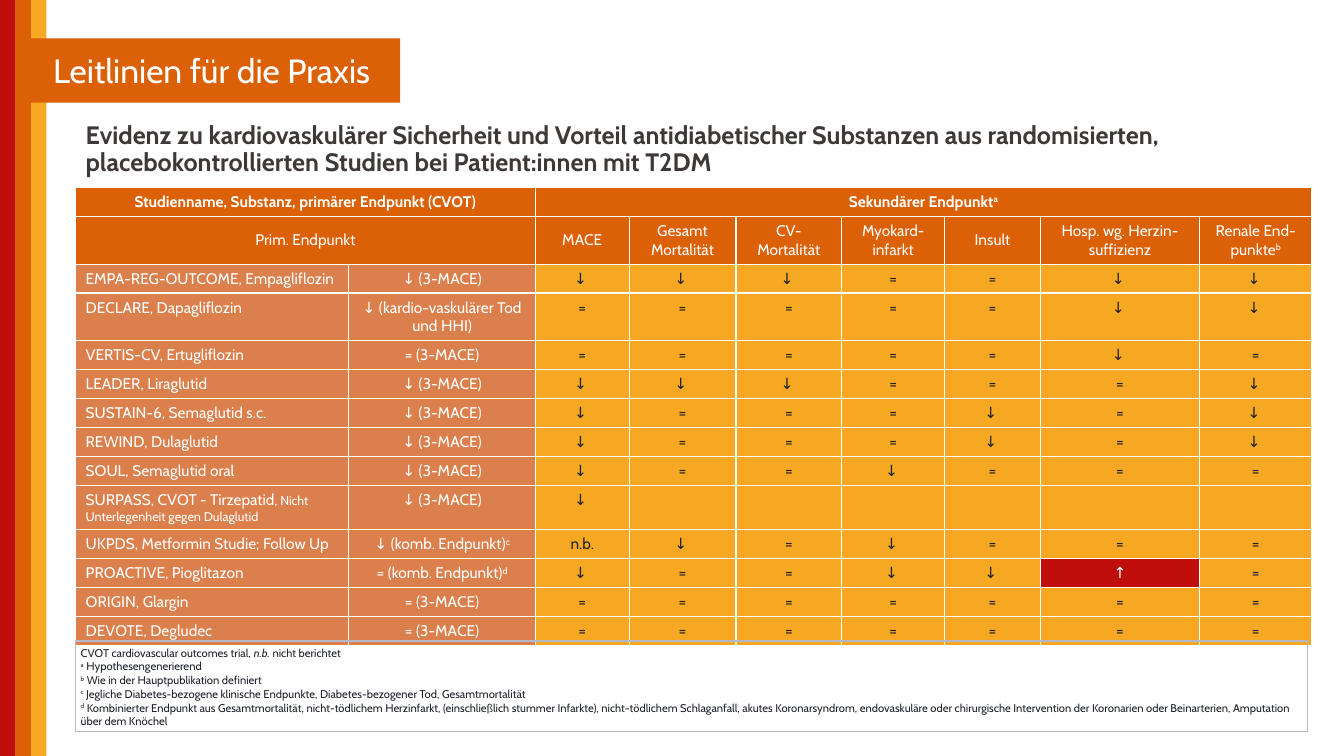
from itertools import zip_longest
from lxml import etree
from pptx import Presentation
from pptx.dml.color import RGBColor
from pptx.enum.shapes import MSO_SHAPE
from pptx.enum.text import MSO_ANCHOR, PP_ALIGN
from pptx.oxml.ns import qn
from pptx.util import Inches, Pt

RECTANGLE = MSO_SHAPE.RECTANGLE
CENTER, LEFT = PP_ALIGN.CENTER, PP_ALIGN.LEFT
MIDDLE, TOP = MSO_ANCHOR.MIDDLE, MSO_ANCHOR.TOP
COLORS = {
    "red": "C00E0D", "orange": "DB6006", "yellow": "F7A824",
    "study": "DB804D", "result": "F7A823", "white": "FFFFFF",
    "ink": "1E212A", "heading": "3E3837", "rule": "B4B8C7",
}


def write(frame, text, size=11, color="white", bold=False, align=CENTER, spacing=None):
    """Newline parts paragraphs, | parts spans; ^ raises, _ slants, ~ shrinks a span."""
    for number, line in enumerate(text.split("\n")):
        para = frame.paragraphs[0] if number == 0 else frame.add_paragraph()
        para.alignment = align
        if spacing:
            para.line_spacing = spacing
        for part in line.split("|"):
            mark = part[:1] if part[:1] in ("^", "_", "~") else ""
            span = para.add_run()
            span.text = part[len(mark):]
            span.font.name = "Cabin"
            span.font.size = Pt(9 if mark == "~" else size)
            span.font.bold = bold
            span.font.italic = mark == "_"
            span.font.color.rgb = RGBColor.from_string(COLORS[color])
            if mark == "^":
                span.font._element.set("baseline", "30000")


def style_cell(cell, fill, border, anchor):
    cell.vertical_anchor = anchor
    if fill:
        cell.fill.solid()
        cell.fill.fore_color.rgb = RGBColor.from_string(COLORS[fill])
    else:
        cell.fill.background()
    properties = cell._tc.get_or_add_tcPr()
    for position, side in enumerate(("a:lnL", "a:lnR", "a:lnT", "a:lnB")):
        line = etree.Element(qn(side), w=str(Pt(1)))
        solid = etree.SubElement(line, qn("a:solidFill"))
        etree.SubElement(solid, qn("a:srgbClr"), val=COLORS[border])
        properties.insert(position, line)


deck = Presentation()
deck.slide_width, deck.slide_height = Inches(13.33), Inches(7.5)
page = deck.slides.add_slide(deck.slide_layouts[6])

# Side stripes and banner
banner_parts = [
    (0, 0, 0.16, 7.5, "red"),
    (0.15, 0, 0.16, 7.5, "orange"),
    (0.31, 0, 0.15, 7.5, "yellow"),
    (0.23, 0.38, 3.74, 0.64, "orange"),
]
for left, top, width, height, color in banner_parts:
    banner = page.shapes.add_shape(
        RECTANGLE, Inches(left), Inches(top), Inches(width), Inches(height))
    banner.shadow.inherit = False
    banner.fill.solid()
    banner.fill.fore_color.rgb = RGBColor.from_string(COLORS[color])
    banner.line.fill.background()
banner.text_frame.vertical_anchor = MIDDLE
write(banner.text_frame, "Leitlinien für die Praxis", size=24)

# Study table
column_widths = [2.71, 1.85, 0.93, 1.06, 1.05, 1.02, 0.95, 1.58, 1.11]
endpoints = ["MACE", "Gesamt Mortalität", "CV-\nMortalität", "Myokard-infarkt",
             "Insult", "Hosp. wg. Herzin-suffizienz", "Renale End-punkte|^b"]
studies = [
    ("EMPA-REG-OUTCOME, Empagliflozin", "↓ (3-MACE)", "↓ ↓ ↓ = = ↓ ↓"),
    ("DECLARE, Dapagliflozin", "↓ (kardio-vaskulärer Tod und HHI)", "= = = = = ↓ ↓"),
    ("VERTIS-CV, Ertugliflozin", "= (3-MACE)", "= = = = = ↓ ="),
    ("LEADER, Liraglutid", "↓ (3-MACE)", "↓ ↓ ↓ = = = ↓"),
    ("SUSTAIN-6, Semaglutid s.c.", "↓ (3-MACE)", "↓ = = = ↓ = ↓"),
    ("REWIND, Dulaglutid", "↓ (3-MACE)", "↓ = = = ↓ = ↓"),
    ("SOUL, Semaglutid oral", "↓ (3-MACE)", "↓ = = ↓ = = ="),
    ("SURPASS, CVOT - Tirzepatid|~, Nicht Unterlegenheit gegen Dulaglutid",
     "↓ (3-MACE)", "↓"),
    ("UKPDS, Metformin Studie; Follow Up", "↓ (komb. Endpunkt)|^c", "n.b. ↓ = ↓ = = ="),
    ("PROACTIVE, Pioglitazon", "= (komb. Endpunkt)|^d", "↓ = = ↓ ↓ ↑ ="),
    ("ORIGIN, Glargin", "= (3-MACE)", "= = = = = = ="),
    ("DEVOTE, Degludec", "= (3-MACE)", "= = = = = = ="),
]
tall_rows = {1: 0.47, 3: 0.47, 9: 0.44}
row_count, column_count = len(studies) + 2, len(column_widths)
study_table = page.shapes.add_table(
    row_count, column_count, Inches(0.75), Inches(1.86), Inches(12.26), Inches(4.46)).table
study_table.first_row = study_table.horz_banding = False
for column, width in zip(study_table.columns, column_widths):
    column.width = Inches(width)
for index, row in enumerate(study_table.rows):
    row.height = Inches(tall_rows.get(index, 0.28))

# Header rows
for row in range(2):
    for column in range(column_count):
        style_cell(study_table.cell(row, column), "orange", "white", MIDDLE)
    study_table.cell(row, 0).merge(study_table.cell(row, 1))
study_table.cell(0, 2).merge(study_table.cell(0, column_count - 1))
write(study_table.cell(0, 0).text_frame,
      "Studienname, Substanz, primärer Endpunkt (CVOT)", bold=True)
write(study_table.cell(0, 2).text_frame, "Sekundärer Endpunkt|^a", bold=True)
write(study_table.cell(1, 0).text_frame, "Prim. Endpunkt")
for column, endpoint in enumerate(endpoints, start=2):
    write(study_table.cell(1, column).text_frame, endpoint)

# Study rows
for row, (study, primary, results) in enumerate(studies, start=2):
    for column, text in enumerate((study, primary)):
        cell = study_table.cell(row, column)
        style_cell(cell, "study", "white", TOP)
        write(cell.text_frame, text, align=CENTER if column else LEFT)
    for column, (_, result) in enumerate(
            zip_longest(endpoints, results.split(), fillvalue=""), start=2):
        cell = study_table.cell(row, column)
        raised = result == "↑"
        style_cell(cell, "red" if raised else "result", "white", TOP)
        write(cell.text_frame, "↓ " if result == "↓" else result,
              color="white" if raised else "ink")

# Heading
heading = page.shapes.add_textbox(Inches(0.75), Inches(1.17), Inches(12.22), Inches(0.48))
heading.text_frame.word_wrap = True
write(heading.text_frame,
      "Evidenz zu kardiovaskulärer Sicherheit und Vorteil antidiabetischer Substanzen aus "
      "randomisierten, placebokontrollierten Studien bei Patient:innen mit T2DM",
      size=18, color="heading", bold=True, align=LEFT, spacing=0.9)

# Footnotes
footnotes = "\n".join([
    "CVOT cardiovascular outcomes trial, |_n.b. |nicht berichtet",
    "^a| Hypothesengenerierend",
    "^b| Wie in der Hauptpublikation definiert",
    "^c| Jegliche Diabetes-bezogene klinische Endpunkte, Diabetes-bezogener Tod, "
    "Gesamtmortalität",
    "^d| Kombinierter Endpunkt aus Gesamtmortalität, nicht-tödlichem Herzinfarkt, "
    "(einschließlich stummer Infarkte), nicht-tödlichem Schlaganfall, akutes "
    "Koronarsyndrom, endovaskuläre oder chirurgische Intervention der Koronarien oder "
    "Beinarterien, Amputation über dem Knöchel",
])
note_table = page.shapes.add_table(
    1, 1, Inches(0.75), Inches(6.36), Inches(12.22), Inches(0.9)).table
note_table.first_row = note_table.horz_banding = False
note_cell = note_table.cell(0, 0)
style_cell(note_cell, None, "rule", MIDDLE)
note_cell.margin_left = note_cell.margin_right = Inches(0.05)
note_cell.margin_top = note_cell.margin_bottom = Inches(0.05)
write(note_cell.text_frame, footnotes, size=8, color="ink", align=LEFT)

deck.save("out.pptx")
